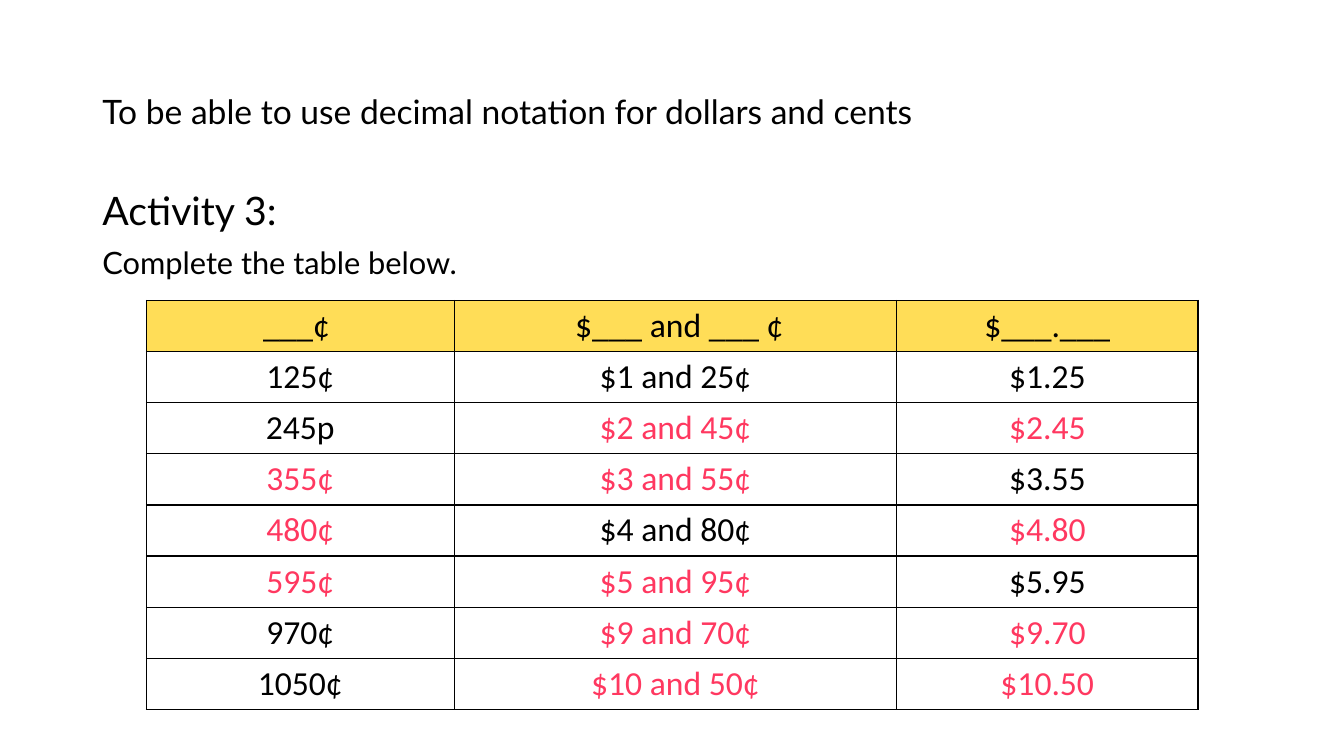
import pptx
import pptx.util
import pptx.dml.color
import pptx.enum.text
import pptx.oxml
import pptx.oxml.ns

Pt = pptx.util.Pt
Align = pptx.enum.text.PP_ALIGN
Anchor = pptx.enum.text.MSO_ANCHOR

# Content
TITLE = "To be able to use decimal notation for dollars and cents"
BODY = [("Activity 3:", "heading"), ("Complete the table below.", "instruction")]
HEADERS = ("___¢ ", " $___ and ___ ¢", "$___.___")
# Each row: the three amounts, then the columns that hold pupils' answers
ROWS = [
    (("125¢", "$1 and 25¢", "$1.25"), ()),
    (("245p", "$2 and 45¢", "$2.45"), (1, 2)),
    (("355¢", "$3 and 55¢", "$3.55"), (0, 1)),
    (("480¢", "$4 and 80¢", "$4.80"), (0, 2)),
    (("595¢", "$5 and 95¢", "$5.95"), (0, 1)),
    (("970¢", "$9 and 70¢", "$9.70"), (1, 2)),
    (("1050¢", "$10 and 50¢", "$10.50"), (1, 2)),
]

THEME = {
    "text": "000000", "answer": "FF3860", "header": "FFDD57",
    "cell": "FFFFFF", "border": "000000",
    "text font": "Lato", "table font": "Calibri",
    "title": 24, "heading": 28, "instruction": 22, "table": 24,
}

# Layout, in points
SLIDE_SIZE = (960, 540)
TITLE_BOX = (66, 28.8, 691.2, 104.4)
BODY_BOX = (66, 133.2, 866, 342.7)
TABLE_LEFT, TABLE_TOP = 104.6, 214.6
COLUMN_WIDTHS = (219.8, 316.1, 215.2)
ROW_HEIGHT = 36.5


def color(name):
    return pptx.dml.color.RGBColor.from_string(THEME[name])


def set_values(target, values):
    for name, value in values.items():
        setattr(target, name, value)


def write(para, text, font, size, ink="text"):
    span = para.add_run()
    span.text = text
    set_values(span.font, {"name": THEME[font], "size": Pt(THEME[size]), "bold": False})
    span.font.color.rgb = color(ink)


def place(box, bounds, anchor):
    set_values(box, dict(zip(("left", "top", "width", "height"), map(Pt, bounds))))
    set_values(box.text_frame, {
        "word_wrap": True, "vertical_anchor": anchor,
        "auto_size": pptx.enum.text.MSO_AUTO_SIZE.NONE,
    })


def add_borders(cell):
    properties = cell._tc.get_or_add_tcPr()
    for position, side in enumerate(("lnL", "lnR", "lnT", "lnB")):
        properties.insert(position, pptx.oxml.parse_xml(
            f'<a:{side} {pptx.oxml.ns.nsdecls("a")} w="{Pt(1)}"><a:solidFill>'
            f'<a:srgbClr val="{THEME["border"]}"/></a:solidFill></a:{side}>'))


def add_title(page):
    box = page.shapes.title
    place(box, TITLE_BOX, Anchor.MIDDLE)
    para = box.text_frame.paragraphs[0]
    set_values(para, {"alignment": Align.LEFT, "line_spacing": 0.9})
    write(para, TITLE, "text font", "title")


def add_body(page):
    box = page.placeholders[1]
    place(box, BODY_BOX, Anchor.TOP)
    for index, (text, size) in enumerate(BODY):
        frame = box.text_frame
        para = frame.add_paragraph() if index else frame.paragraphs[0]
        properties = para._p.get_or_add_pPr()
        properties.set("marL", "0")
        properties.set("indent", "0")
        properties.append(pptx.oxml.parse_xml(
            f'<a:buNone {pptx.oxml.ns.nsdecls("a")}/>'))
        set_values(para, {"alignment": Align.LEFT, "line_spacing": 0.9,
                          "space_before": Pt(10 if index else 0)})
        write(para, text, "text font", size)


def add_money_table(page):
    lines = [(HEADERS, ())] + ROWS
    table = page.shapes.add_table(
        len(lines), len(HEADERS), Pt(TABLE_LEFT), Pt(TABLE_TOP),
        Pt(sum(COLUMN_WIDTHS)), Pt(ROW_HEIGHT * len(lines))).table
    set_values(table, {"first_row": False, "horz_banding": False})
    for column, width in zip(table.columns, COLUMN_WIDTHS):
        column.width = Pt(width)
    for row_index, (amounts, answers) in enumerate(lines):
        table.rows[row_index].height = Pt(ROW_HEIGHT)
        for column_index, amount in enumerate(amounts):
            cell = table.cell(row_index, column_index)
            cell.vertical_anchor = Anchor.MIDDLE
            cell.fill.solid()
            cell.fill.fore_color.rgb = color("cell" if row_index else "header")
            add_borders(cell)
            para = cell.text_frame.paragraphs[0]
            para.alignment = Align.CENTER
            write(para, amount, "table font", "table",
                  "answer" if column_index in answers else "text")


def main():
    deck = pptx.Presentation()
    set_values(deck, dict(zip(("slide_width", "slide_height"), map(Pt, SLIDE_SIZE))))
    page = deck.slides.add_slide(deck.slide_layouts[1])
    add_title(page)
    add_body(page)
    add_money_table(page)
    deck.save("out.pptx")


if __name__ == "__main__":
    main()
